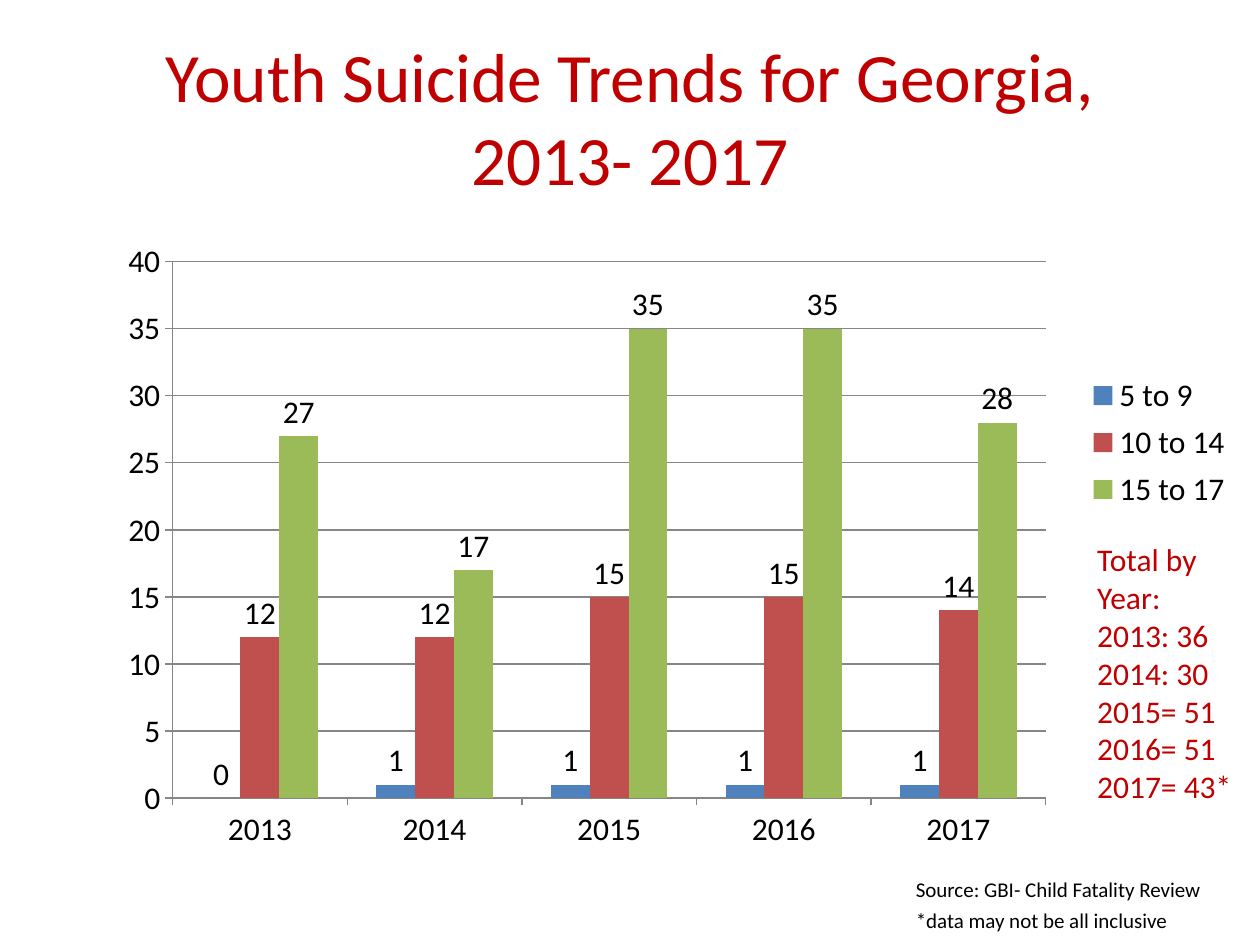
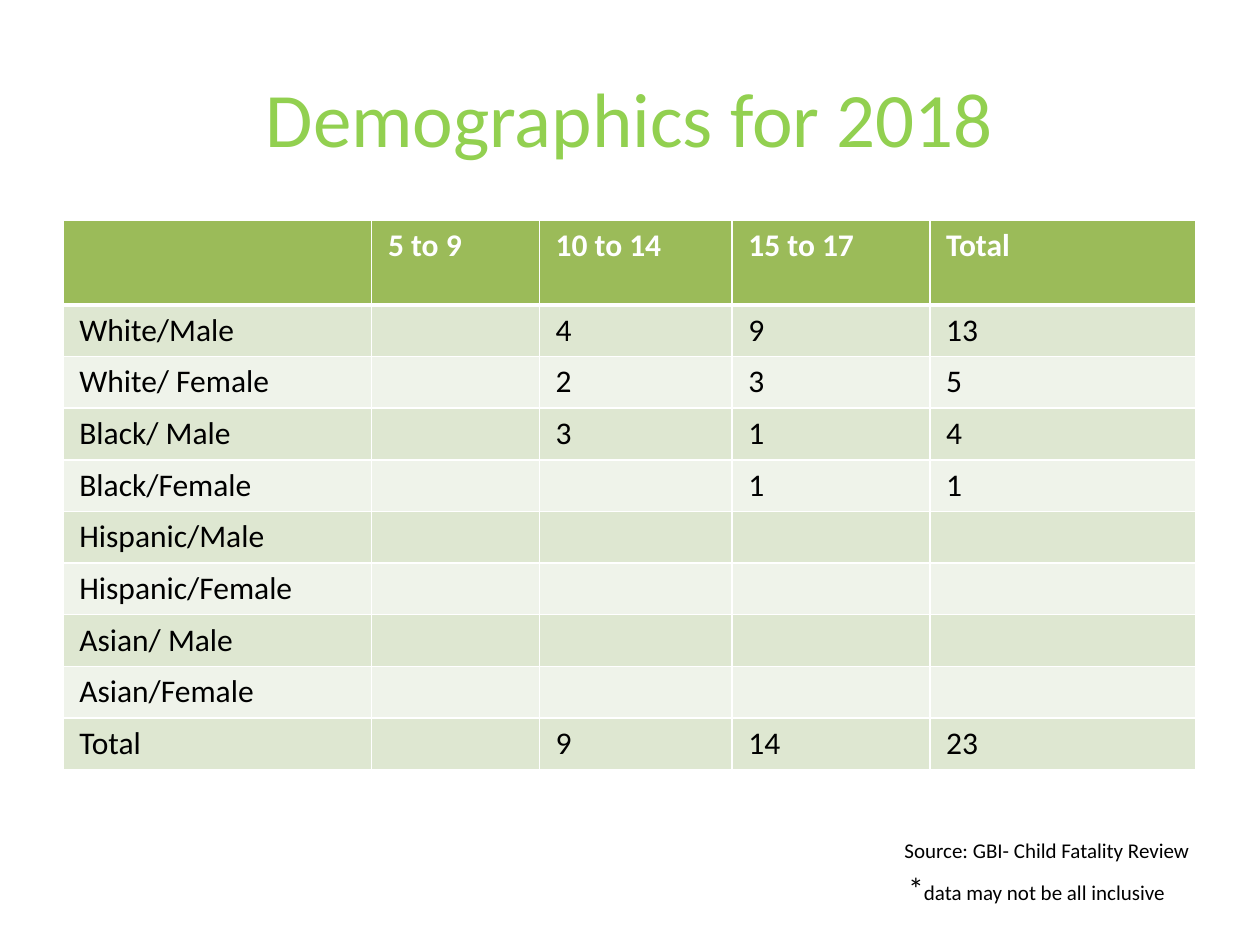
from lxml import etree
from pptx import Presentation
from pptx.chart.data import CategoryChartData
from pptx.dml.color import RGBColor
from pptx.enum.chart import XL_CHART_TYPE, XL_LABEL_POSITION, XL_LEGEND_POSITION, XL_TICK_MARK
from pptx.enum.text import MSO_ANCHOR, PP_ALIGN
from pptx.oxml import parse_xml
from pptx.oxml.ns import nsdecls, qn
from pptx.util import Inches, Pt

COLUMN = XL_CHART_TYPE.COLUMN_CLUSTERED
OUTER = XL_LABEL_POSITION.OUTSIDE_END
RIGHT = XL_LEGEND_POSITION.RIGHT
TICK = XL_TICK_MARK.OUTSIDE
MIDDLE, TOP = MSO_ANCHOR.MIDDLE, MSO_ANCHOR.TOP
CENTER, LEFT = PP_ALIGN.CENTER, PP_ALIGN.LEFT

BLACK = RGBColor(0x00, 0x00, 0x00)
WHITE = RGBColor(0xFF, 0xFF, 0xFF)
RED = RGBColor(0xC0, 0x00, 0x00)
LIME = RGBColor(0x92, 0xD0, 0x50)
GRAY = RGBColor(0x86, 0x86, 0x86)
BLUE = RGBColor(0x4F, 0x81, 0xBD)
BRICK = RGBColor(0xC0, 0x50, 0x4D)
GREEN = RGBColor(0x9B, 0xBB, 0x59)
BANDS = (RGBColor(0xDE, 0xE7, 0xD1), RGBColor(0xEF, 0xF3, 0xEA))

FONT = "Calibri"
TITLE = (0.5, 0.3, 9, 1.25)
SOURCE = "Source: GBI- Child Fatality Review"
NOTE = "data may not be all inclusive"
AGES = ("5 to 9", "10 to 14", "15 to 17")


def write(slide, box, lines, color, align=LEFT, anchor=TOP):
    """Add a text box; each line is a list of (text, size) runs, \\v breaks a line."""
    frame = slide.shapes.add_textbox(*map(Inches, box)).text_frame
    frame.word_wrap = True
    frame.vertical_anchor = anchor
    for i, line in enumerate(lines):
        para = frame.paragraphs[0] if i == 0 else frame.add_paragraph()
        para.alignment = align
        for text, size in line:
            for n, part in enumerate(text.split("\v")):
                if n:
                    para.add_line_break()
                run = para.add_run()
                run.text = part
                look = {"name": FONT, "size": Pt(size)}
                for key, val in look.items():
                    setattr(run.font, key, val)
                run.font.color.rgb = color


def place(x, y, w, h, inner=False):
    """Make a manual chart layout from shares of the chart area."""
    parts = {"xMode": "edge", "yMode": "edge", "x": x, "y": y, "w": w, "h": h}
    if inner:
        parts = {"layoutTarget": "inner", **parts}
    layout = parse_xml(f"<c:layout {nsdecls('c')}><c:manualLayout/></c:layout>")
    for tag, val in parts.items():
        etree.SubElement(layout[0], qn(f"c:{tag}")).set("val", str(val))
    return layout


deck = Presentation()
deck.slide_width, deck.slide_height = Inches(10), Inches(7.5)
blank = deck.slide_layouts[6]

# Slide 1: trend chart
trend = deck.slides.add_slide(blank)
write(trend, TITLE, [[("Youth Suicide Trends for Georgia,\v2013- 2017", 39.6)]],
      RED, CENTER, MIDDLE)

data = CategoryChartData(number_format="General")
data.categories = [str(year) for year in range(2013, 2018)]
counts = ((0, 1, 1, 1, 1), (12, 12, 15, 15, 14), (27, 17, 35, 35, 28))
for age, vals in zip(AGES, counts):
    data.add_series(age, vals)
area = map(Inches, (0.83, 1.83, 9, 4.95))
chart = trend.shapes.add_chart(COLUMN, *area, data).chart
chart.has_title = False
chart.font.name, chart.font.size = FONT, Pt(18)
chart.font.color.rgb = BLACK

plot = chart.plots[0]
for key, val in {"gap_width": 150, "overlap": 0, "vary_by_categories": False,
                 "has_data_labels": True}.items():
    setattr(plot, key, val)
plot.data_labels.show_value = True
plot.data_labels.position = OUTER
for series, color in zip(plot.series, (BLUE, BRICK, GREEN)):
    series.format.fill.solid()
    series.format.fill.fore_color.rgb = color

scale = chart.value_axis
for key, val in {"minimum_scale": 0, "maximum_scale": 40, "major_unit": 5,
                 "has_major_gridlines": True}.items():
    setattr(scale, key, val)
for axis in (scale, chart.category_axis):
    axis.major_tick_mark = TICK
    axis.format.line.color.rgb = GRAY
scale.major_gridlines.format.line.color.rgb = GRAY

chart.has_legend = True
legend = chart.legend
legend.position = RIGHT
legend.include_in_layout = False
root = chart.element
for old in root.findall(".//" + qn("c:layout")):
    old.getparent().remove(old)
root.find(".//" + qn("c:plotArea")).insert(0, place(0.06, 0.05, 0.77, 0.86, True))
root.find(".//" + qn("c:legendPos")).addnext(place(0.86, 0.22, 0.14, 0.24))

write(trend, (7.17, 7.15, 2.5, 0.3), [[("*" + NOTE, 12)]], BLACK)
write(trend, (7.17, 6.91, 2.83, 0.3), [[(SOURCE, 12)]], BLACK)
sums = ("Total by Year:", "2013: 36", "2014: 30", "2015= 51", "2016= 51", "2017= 43*")
write(trend, (8.61, 4.24, 1.39, 2.22), [[(line, 18)] for line in sums], RED)

# Slide 2: demographics table
people = deck.slides.add_slide(blank)
write(people, TITLE, [[("Demographics for 2018", 44)]], LIME, CENTER, MIDDLE)

rows = (
    ("", *AGES, "Total"),
    ("White/Male", "", "4", "9", "13"),
    ("White/ Female", "", "2", "3", "5"),
    ("Black/ Male", "", "3", "1", "4"),
    ("Black/Female", "", "", "1", "1"),
    ("Hispanic/Male", "", "", "", ""),
    ("Hispanic/Female", "", "", "", ""),
    ("Asian/ Male", "", "", "", ""),
    ("Asian/Female", "", "", "", ""),
    ("Total", "", "9", "14", "23"),
)
widths = (2.45, 1.33, 1.53, 1.57, 2.11)
area = map(Inches, (0.5, 1.75, 9, 4.32))
table = people.shapes.add_table(len(rows), len(widths), *area).table
for col, width in zip(table.columns, widths):
    col.width = Inches(width)
for r, row in enumerate(rows):
    head = r == 0
    table.rows[r].height = Inches(0.67 if head else 0.41)
    for c, text in enumerate(row):
        cell = table.cell(r, c)
        cell.text = text
        cell.margin_left = cell.margin_right = Inches(0.13)
        cell.fill.solid()
        cell.fill.fore_color.rgb = GREEN if head else BANDS[(r - 1) % 2]
        font = cell.text_frame.paragraphs[0].font
        if text:
            font = cell.text_frame.paragraphs[0].runs[0].font
        for key, val in {"name": FONT, "size": Pt(18), "bold": head}.items():
            setattr(font, key, val)
        font.color.rgb = WHITE if head else BLACK
        thick = {"B": 3} if head else {"T": 3} if r == 1 else {}
        for i, side in enumerate("LRTB"):
            edge = parse_xml(
                f'<a:ln{side} {nsdecls("a")} w="{Pt(thick.get(side, 1))}"><a:solidFill>'
                f'<a:srgbClr val="{WHITE}"/></a:solidFill></a:ln{side}>')
            cell._tc.get_or_add_tcPr().insert(i, edge)

write(people, (7.11, 6.85, 2.89, 0.4), [[("*", 18), (NOTE, 12)]], BLACK)
write(people, (7.08, 6.6, 2.92, 0.5), [[(SOURCE, 12)]], BLACK)

deck.save("out.pptx")
